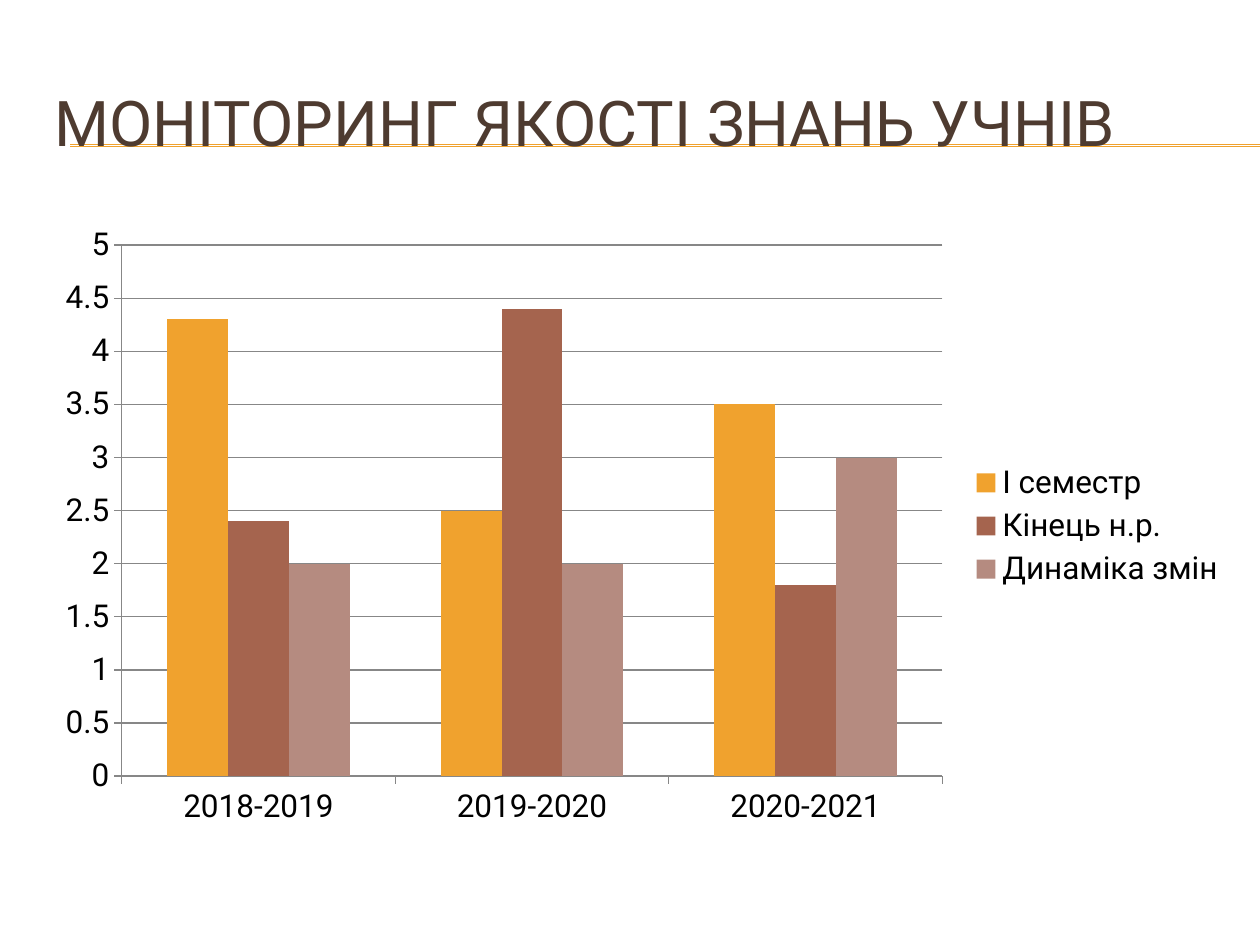
"""Build a slide with a column chart monitoring the quality of pupils' knowledge."""

from dataclasses import dataclass

import pptx
import pptx.chart.data
import pptx.dml.color
import pptx.enum.chart
import pptx.enum.shapes
import pptx.enum.text
import pptx.oxml
import pptx.util
from pptx.util import Cm

FONT = "Roboto"
COLORS = {
    "background": "FFFFFF",
    "title": "4E3B30",
    "text": "000000",
    "axis": "878787",
    "amber": "F0A22E",
    "rust": "A5644E",
    "rose": "B58B80",
}
SLIDE_WIDTH, SLIDE_HEIGHT = Cm(25.4), Cm(19.05)
LEFT, WIDTH = Cm(0.84), Cm(24.13)
RULE_LEFT = Cm(1.42)
RULE_TOPS = (Cm(2.92), Cm(2.95))
YEARS = ("2018-2019", "2019-2020", "2020-2021")


@dataclass(frozen=True)
class Series:
    name: str
    values: tuple[float, ...]
    color: str


SERIES = (
    Series("І семестр", (4.3, 2.5, 3.5), "amber"),
    Series("Кінець н.р.", (2.4, 4.4, 1.8), "rust"),
    Series("Динаміка змін", (2, 2, 3), "rose"),
)


def rgb(name: str) -> pptx.dml.color.RGBColor:
    """Return the named colour."""
    return pptx.dml.color.RGBColor.from_string(COLORS[name])


def add_rule(page, top: int) -> None:
    """Draw a thin line to the right edge, behind the other objects."""
    rule = page.shapes.add_connector(
        pptx.enum.shapes.MSO_CONNECTOR.STRAIGHT, RULE_LEFT, top, SLIDE_WIDTH, top
    )
    rule.line.color.rgb = rgb("amber")
    rule.line.width = pptx.util.Pt(0.75)
    properties = rule._element.spPr
    properties.append(pptx.oxml.parse_xml(
        '<a:effectLst xmlns:a="http://schemas.openxmlformats.org/drawingml/2006/main"/>'
    ))
    page.shapes._spTree.insert(2, rule._element)


def fill_title(page, text: str) -> None:
    """Place and format the title placeholder."""
    title = page.shapes.title
    title.left, title.top, title.width, title.height = LEFT, Cm(1.27), WIDTH, Cm(2.34)
    frame = title.text_frame
    frame.text = text
    frame.word_wrap = True
    frame.auto_size = pptx.enum.text.MSO_AUTO_SIZE.NONE
    frame.vertical_anchor = pptx.enum.text.MSO_ANCHOR.MIDDLE
    para = frame.paragraphs[0]
    para.alignment = pptx.enum.text.PP_ALIGN.LEFT
    para.font.name = FONT
    para.font.size = pptx.util.Pt(36)
    para.font.color.rgb = rgb("title")


def format_line(line) -> None:
    """Give an axis or gridline its thin grey line."""
    line.color.rgb = rgb("axis")
    line.width = pptx.util.Pt(0.75)


def add_column_chart(page) -> None:
    """Draw the clustered columns with axes and legend."""
    data = pptx.chart.data.CategoryChartData()
    data.categories = YEARS
    for series in SERIES:
        data.add_series(series.name, series.values)
    chart = page.shapes.add_chart(
        pptx.enum.chart.XL_CHART_TYPE.COLUMN_CLUSTERED,
        LEFT, Cm(4.32), WIDTH, Cm(12.57), data,
    ).chart
    chart.font.name = FONT
    chart.font.size = pptx.util.Pt(18)
    chart.font.color.rgb = rgb("text")
    chart.has_title = False
    chart.has_legend = True
    chart.legend.position = pptx.enum.chart.XL_LEGEND_POSITION.RIGHT
    chart.legend.include_in_layout = False

    plot = chart.plots[0]
    plot.gap_width = 150
    plot.overlap = 0
    plot.vary_by_categories = False
    for columns, series in zip(plot.series, SERIES):
        columns.format.fill.solid()
        columns.format.fill.fore_color.rgb = rgb(series.color)

    for axis in (chart.category_axis, chart.value_axis):
        axis.major_tick_mark = pptx.enum.chart.XL_TICK_MARK.OUTSIDE
        format_line(axis.format.line)
    scale = chart.value_axis
    scale.minimum_scale, scale.maximum_scale, scale.major_unit = 0, 5, 0.5
    scale.has_major_gridlines = True
    format_line(scale.major_gridlines.format.line)


def main() -> None:
    """Build and save the deck."""
    deck = pptx.Presentation()
    deck.slide_width, deck.slide_height = SLIDE_WIDTH, SLIDE_HEIGHT
    page = deck.slides.add_slide(deck.slide_layouts.get_by_name("Title Only"))
    page.background.fill.solid()
    page.background.fill.fore_color.rgb = rgb("background")
    for top in RULE_TOPS:
        add_rule(page, top)
    fill_title(page, "МОНІТОРИНГ ЯКОСТІ ЗНАНЬ УЧНІВ")
    add_column_chart(page)
    deck.save("out.pptx")


if __name__ == "__main__":
    main()
